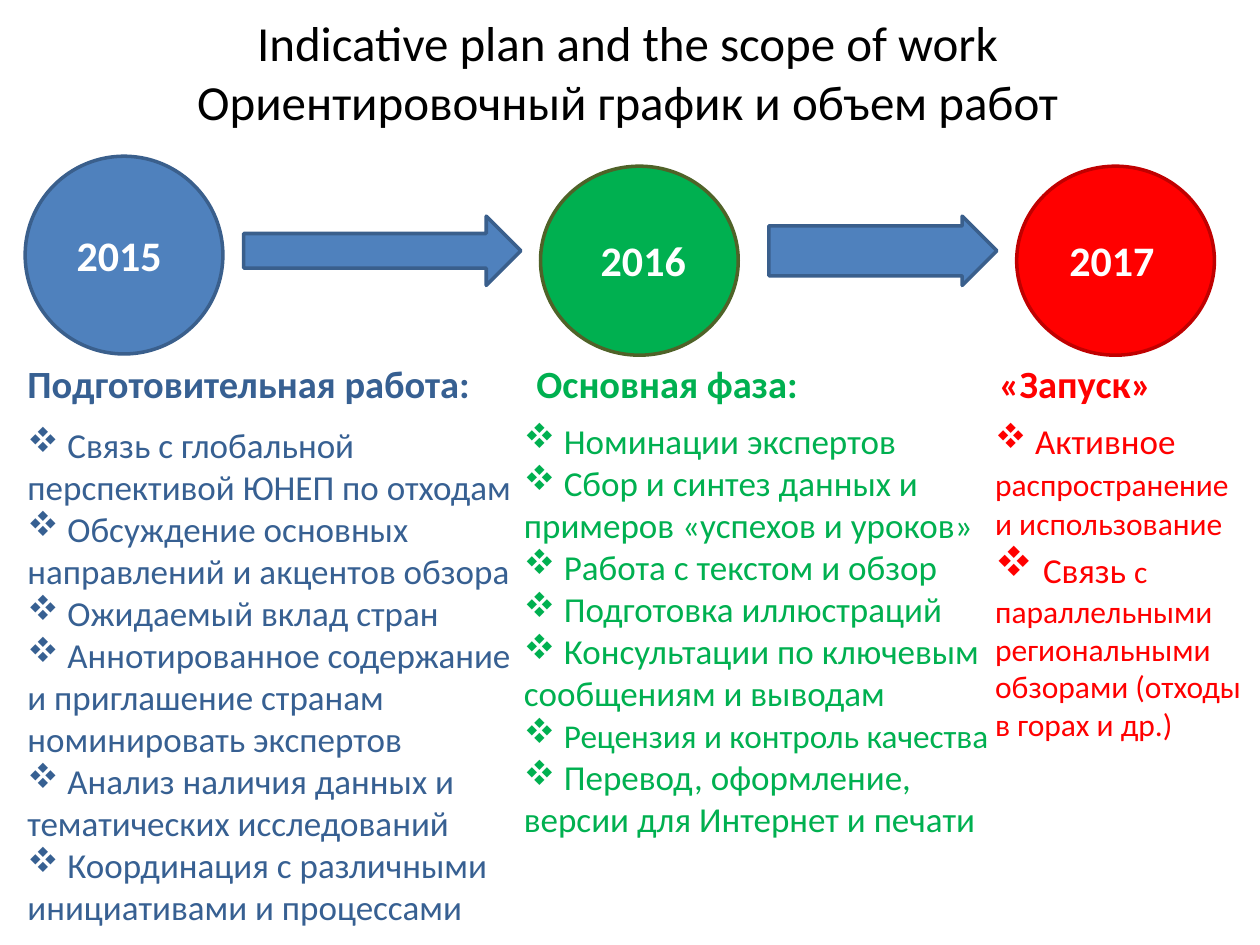
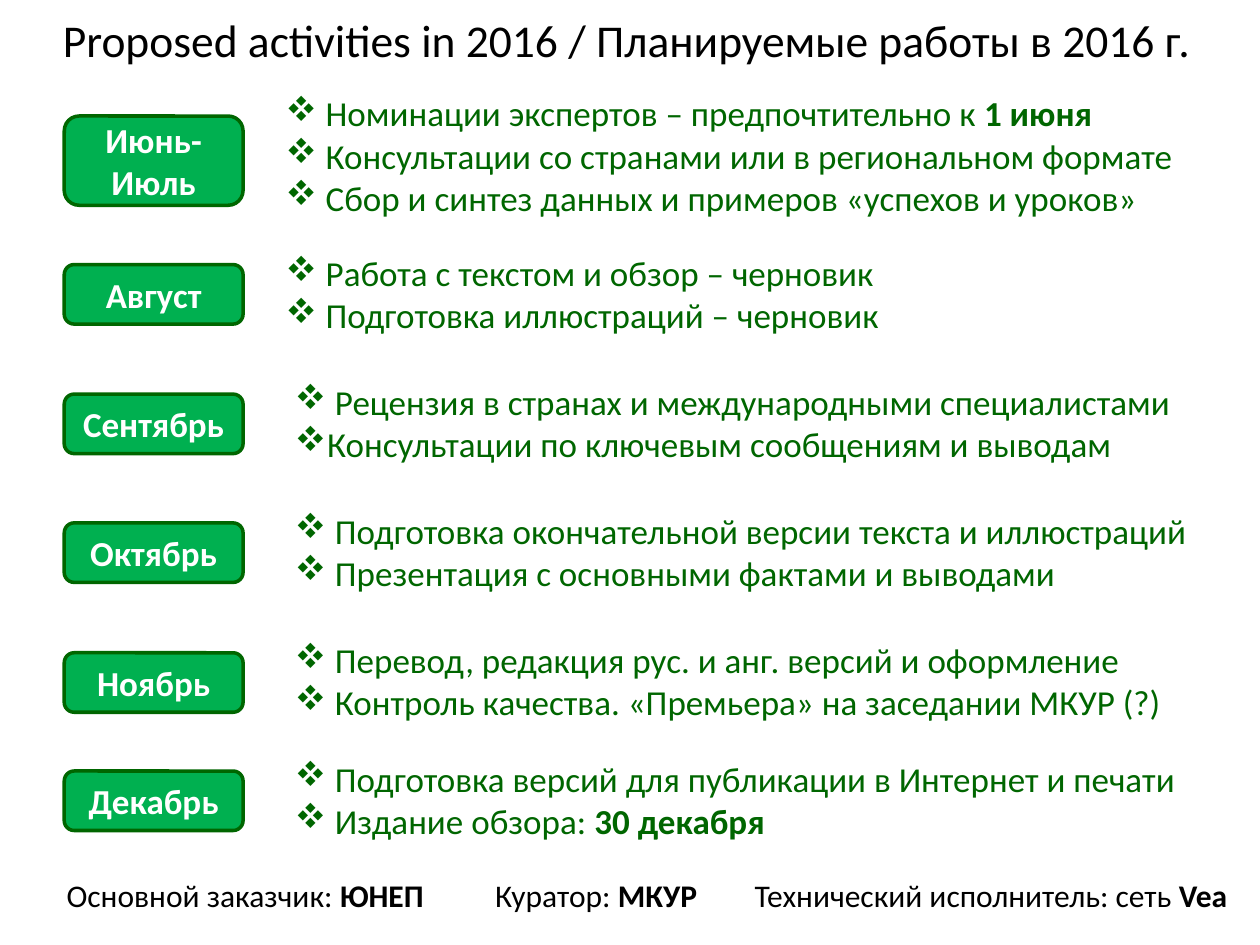
from lxml.etree import SubElement
from pptx import Presentation
from pptx.dml.color import RGBColor
from pptx.enum.shapes import MSO_SHAPE
from pptx.enum.text import MSO_ANCHOR, MSO_AUTO_SIZE, PP_ALIGN
from pptx.oxml.ns import qn
from pptx.util import Pt

FONT = "Calibri"
BULLET = "❖"
BULLET_FONT, BULLET_CODE = "Wingdings", "v"  # v is ❖ in Wingdings
COLORS = {
    "black": "000000", "white": "FFFFFF",
    "blue": "4F81BD", "blue_line": "3A5F8C", "blue_text": "376092",
    "green": "00B050", "olive": "4F6228", "dark_green": "006600",
    "red": "FF0000", "dark_red": "C00000",
}

# A paragraph is a string or a list of (text, format) runs; a leading ❖ makes it a bullet.
PLAN_TITLE = ["Indicative plan and the scope of work", "Ориентировочный график и объем работ"]
PHASES = [
    dict(year="2015", fill="blue", line="blue_line", color="blue_text",
         circle=(14.4, 89.3, 113, 113), year_at=(36.7, 127.4),
         heading="Подготовительная работа:", heading_at=(8.6, 270),
         box=(8.6, 238.3, 294.5, 298),
         tasks=["❖ Связь с глобальной перспективой ЮНЕП по отходам",
                "❖ Обсуждение основных направлений и акцентов обзора",
                "❖ Ожидаемый вклад стран",
                "❖ Аннотированное содержание и приглашение странам номинировать экспертов",
                "❖ Анализ наличия данных и тематических исследований",
                "❖ Координация с различными инициативами и процессами"]),
    dict(year="2016", fill="green", line="olive", color="green",
         circle=(308.9, 95, 113, 108), year_at=(336.2, 130.3),
         heading="Основная фаза:", heading_at=(299.5, 165.6),
         box=(292.3, 236.2, 283.7, 250),
         tasks=["❖ Номинации экспертов",
                "❖ Сбор и синтез данных и примеров «успехов и уроков»",
                "❖ Работа с текстом и обзор",
                "❖ Подготовка иллюстраций",
                "❖ Консультации по ключевым сообщениям и выводам",
                [("❖ ", {}), ("Рецензия и контроль качества", {"size": 19})],
                "❖ Перевод, оформление, версии для Интернет и печати"]),
    dict(year="2017", fill="red", line="dark_red", color="red",
         circle=(581, 95, 113, 108), year_at=(604, 130.3),
         heading="«Запуск»", heading_at=(563.8, 103),
         box=(561.6, 236.2, 156.2, 193.7),
         tasks=["❖ Активное",
                [("распространение", {"size": 18}), (" ", {}), ("и использование", {"size": 18})],
                [("❖ ", {"size": 24}), ("Связь ", {}), ("с", {"size": 18})],
                [("параллельными региональными обзорами (отходы в горах и др.)", {"size": 18})]]),
]
# Left, top, length, thickness, shaft share of the thickness
ARROWS = [(139.3, 123.5, 158.4, 39.6, 0.5), (439.3, 123.5, 130.3, 39.6, 0.72)]

ACTIVITIES_TITLE = ["Proposed activities in 2016 / Планируемые работы в 2016 г."]
# Month, label height, label centre, text left, text centre, tasks
MONTHS = [
    ("Июнь-Июль", 51, 91.8, 156.2, 88.9,
     [[("❖ Номинации экспертов – предпочтительно к ", {}), ("1 июня", {"bold": True})],
      "❖ Консультации со странами или в региональном формате",
      "❖ Сбор и синтез данных и примеров «успехов и уроков»"]),
    ("Август", 34, 168.2, 156.2, 168.2,
     ["❖ Работа с текстом и обзор – черновик",
      "❖ Подготовка иллюстраций – черновик"]),
    ("Сентябрь", 34, 242.2, 161.5, 241.6,
     ["❖ Рецензия в странах и международными специалистами",
      "❖Консультации по ключевым сообщениям и выводам"]),
    ("Октябрь", 34, 315.8, 161.5, 315.2,
     ["❖ Подготовка окончательной версии текста и иллюстраций",
      "❖ Презентация с основными фактами и выводами"]),
    ("Ноябрь", 34, 390, 161.5, 389.3,
     ["❖ Перевод, редакция рус. и анг. версий и оформление",
      "❖ Контроль качества. «Премьера» на заседании МКУР (?)"]),
    ("Декабрь", 34, 457.6, 161.5, 457,
     ["❖ Подготовка версий для публикации в Интернет и печати",
      [("❖ Издание обзора: ", {}), ("30 декабря", {"bold": True})]]),
]
# Role, organisation, left, width
CREDITS = [
    ("Основной заказчик: ", "ЮНЕП", 31, 225),
    ("Куратор: ", "МКУР", 275.8, 135),
    ("Технический исполнитель: сеть ", "Vea", 424.1, 293),
]


def rgb(name):
    return RGBColor.from_string(COLORS[name])


def write(tf, paragraphs, size=20, color="black", bold=False, align=PP_ALIGN.LEFT):
    for i, content in enumerate(paragraphs):
        p = tf.paragraphs[0] if i == 0 else tf.add_paragraph()
        p.alignment = align
        runs = [(content, {})] if isinstance(content, str) else content
        if runs[0][0].startswith(BULLET):
            pPr = p._p.get_or_add_pPr()
            SubElement(pPr, qn("a:buFont")).set("typeface", BULLET_FONT)
            SubElement(pPr, qn("a:buChar")).set("char", BULLET_CODE)
        for text, fmt in runs:
            r = p.add_run()
            r.text = text.removeprefix(BULLET)
            r.font.name = FONT
            r.font.size = Pt(fmt.get("size", size))
            r.font.bold = fmt.get("bold", bold)
            r.font.color.rgb = rgb(color)


def add_text(s, box, paragraphs, wrap=True, grow=True, **fmt):
    tf = s.shapes.add_textbox(*map(Pt, box)).text_frame
    tf.word_wrap = wrap
    tf.auto_size = MSO_AUTO_SIZE.SHAPE_TO_FIT_TEXT if grow else MSO_AUTO_SIZE.NONE
    write(tf, paragraphs, **fmt)


def add_shape(s, kind, box, fill, line):
    sp = s.shapes.add_shape(kind, *map(Pt, box))
    sp.shadow.inherit = False
    sp.fill.solid()
    sp.fill.fore_color.rgb = rgb(fill)
    sp.line.color.rgb = rgb(line)
    sp.line.width = Pt(2)
    return sp


def add_slide(prs, title, size):
    s = prs.slides.add_slide(prs.slide_layouts[6])
    add_text(s, (8.6, 3.6, 700, 57), title, grow=False, size=size, align=PP_ALIGN.CENTER)
    return s


def add_arrow(s, left, top, length, thickness, shaft):
    """Draw a down arrow turned to point right; the box is that of the turned arrow."""
    shift = (length - thickness) / 2
    box = (left + shift, top - shift, thickness, length)
    sp = add_shape(s, MSO_SHAPE.DOWN_ARROW, box, "blue", "blue_line")
    sp.rotation = 270
    sp.adjustments[0] = shaft


def build_plan(prs):
    s = add_slide(prs, PLAN_TITLE, 28)
    for arrow in ARROWS:
        add_arrow(s, *arrow)
    for phase in PHASES:
        add_shape(s, MSO_SHAPE.OVAL, phase["circle"], phase["fill"], phase["line"])
        add_text(s, (*phase["year_at"], 63.4, 36), [phase["year"]],
                 wrap=False, size=24, color="white", bold=True)
        left, width = phase["heading_at"]
        add_text(s, (left, 202.3, width, 33.8), [phase["heading"]],
                 wrap=False, size=22, color=phase["color"], bold=True)
        add_text(s, phase["box"], phase["tasks"], color=phase["color"])


def build_activities(prs):
    s = add_slide(prs, ACTIVITIES_TITLE, 26)
    for month, height, centre, left, text_centre, tasks in MONTHS:
        sp = add_shape(s, MSO_SHAPE.ROUNDED_RECTANGLE,
                       (36.7, centre - height / 2, 102.2, height), "green", "dark_green")
        sp.text_frame.word_wrap = True
        sp.text_frame.vertical_anchor = MSO_ANCHOR.MIDDLE
        write(sp.text_frame, [month], color="white", bold=True, align=PP_ALIGN.CENTER)
        text_height = 24.2 * len(tasks) + 7.2
        add_text(s, (left, text_centre - text_height / 2, 540, text_height), tasks,
                 color="dark_green")
    for role, organisation, left, width in CREDITS:
        add_text(s, (left, 496.8, width, 29), [[(role, {}), (organisation, {"bold": True})]],
                 size=18)


def main():
    prs = Presentation()
    prs.slide_width, prs.slide_height = Pt(720), Pt(540)
    build_plan(prs)
    build_activities(prs)
    prs.save("out.pptx")


if __name__ == "__main__":
    main()
